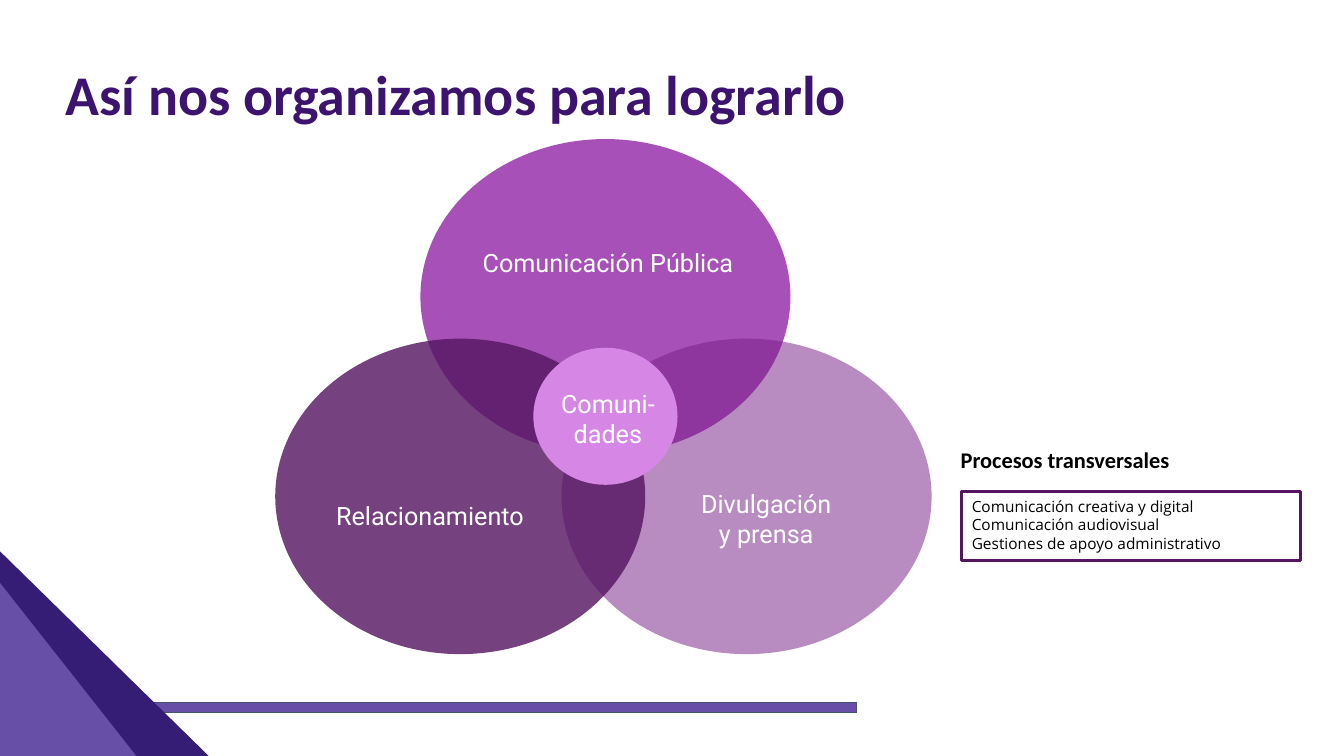
from lxml import etree
from pptx import Presentation
from pptx.dml.color import RGBColor
from pptx.enum import shapes, text
from pptx.oxml import ns
from pptx.util import Inches, Pt

INDIGO = RGBColor(0x35, 0x1C, 0x75)
VIOLET = RGBColor(0x67, 0x4E, 0xA7)
SLATE = RGBColor(0x44, 0x54, 0x6A)
ORCHID = RGBColor(0x92, 0x25, 0xA5)
PURPLE = RGBColor(0x76, 0x1E, 0x86)
PLUM = RGBColor(0x55, 0x15, 0x61)
PINK = RGBColor(0xD6, 0x86, 0xE4)
TITLE = RGBColor(0x3C, 0x13, 0x6E)
WHITE = RGBColor(0xFF, 0xFF, 0xFF)
BLACK = RGBColor(0, 0, 0)

SHAPE = shapes.MSO_SHAPE
ALIGN = text.PP_ALIGN
ANCHOR = text.MSO_ANCHOR

BAND = (0, 6.97, 8.5, 0.1)
CORNERS = [((-0.01, 5.46, 2.09, 2.05), INDIGO), ((-0.01, 5.77, 1.37, 1.74), VIOLET)]
CIRCLE_SIZE = (3.67, 3.13)
CIRCLES = [
    ((4.17, 1.38), ORCHID, 80, ["Comunicación Pública"], (4.59, 2.09, 2.88, 1.02)),
    ((5.57, 3.36), PURPLE, 51, ["Divulgación", "y prensa"], (6.33, 4.63, 2.54, 1.02)),
    ((2.73, 3.36), PLUM, 81, ["Relacionamiento"], (2.48, 4.6, 3.57, 1.02)),
]
PROCESSES = [
    "Comunicación creativa y digital",
    "Comunicación audiovisual",
    "Gestiones de apoyo administrativo",
]


def inches(values):
    return [Inches(value) for value in values]


def add_figure(page, kind, place, fill=None, alpha=100, line=None, width=0.75):
    figure = page.shapes.add_shape(kind, *inches(place))
    figure.shadow.inherit = False
    if fill is None:
        figure.fill.background()
    else:
        figure.fill.solid()
        figure.fill.fore_color.rgb = fill
    if alpha < 100:
        color = figure.fill._xPr.find(".//" + ns.qn("a:srgbClr"))
        etree.SubElement(color, ns.qn("a:alpha"), val=str(alpha * 1000))
    if line is None:
        figure.line.fill.background()
    else:
        figure.line.color.rgb = line
        figure.line.width = Pt(width)
    return figure


def write(box, lines, size, font, color, bold=False, align=ALIGN.LEFT,
          anchor=ANCHOR.TOP, margins=(0.1, 0.05), spacing=None):
    frame = box.text_frame
    frame.word_wrap = True
    frame.auto_size = text.MSO_AUTO_SIZE.NONE
    frame.vertical_anchor = anchor
    frame.margin_left = frame.margin_right = Inches(margins[0])
    frame.margin_top = frame.margin_bottom = Inches(margins[1])
    for index, line in enumerate(lines):
        para = frame.add_paragraph() if index else frame.paragraphs[0]
        para.alignment = align
        para.line_spacing = spacing
        span = para.add_run()
        span.text = line
        span.font.size = Pt(size)
        span.font.name = font
        span.font.bold = bold
        span.font.color.rgb = color


def add_label(page, place, lines, margin):
    box = page.shapes.add_textbox(*inches(place))
    write(box, lines, 18, "Roboto", WHITE, align=ALIGN.CENTER,
          anchor=ANCHOR.MIDDLE, margins=(margin, margin))


def add_decoration(page):
    add_figure(page, SHAPE.RECTANGLE, BAND, VIOLET, line=SLATE)
    for place, color in CORNERS:
        add_figure(page, SHAPE.RIGHT_TRIANGLE, place, color)


def add_title(page):
    title = page.shapes.title
    title.left, title.top, title.width, title.height = inches((0.55, 0.55, 11.5, 0.83))
    write(title, ["Así nos organizamos para lograrlo"], 40, "Calibri", TITLE,
          bold=True, anchor=ANCHOR.MIDDLE, spacing=0.9)


def add_venn(page):
    for corner, color, alpha, lines, place in CIRCLES:
        add_figure(page, SHAPE.OVAL, corner + CIRCLE_SIZE, color, alpha)
        add_label(page, place, lines, 0.13)
    add_figure(page, SHAPE.OVAL, (5.29, 3.45, 1.43, 1.36), PINK)
    add_label(page, (5.16, 3.58, 1.74, 1.14), ["Comuni-", "dades"], 0.1)


def add_processes(page):
    frame = add_figure(page, SHAPE.RECTANGLE, (9.54, 4.88, 3.36, 0.68), line=PLUM, width=2.25)
    write(frame, PROCESSES, 11, "Open Sans", BLACK)
    heading = page.shapes.add_textbox(*inches((9.43, 4.33, 2.39, 0.28)))
    write(heading, ["Procesos transversales"], 16, "Calibri", BLACK,
          bold=True, margins=(0.1, 0.1))


def main():
    deck = Presentation()
    deck.slide_width, deck.slide_height = inches((13.33, 7.5))
    page = deck.slides.add_slide(deck.slide_layouts.get_by_name("Title Only"))
    add_decoration(page)
    add_title(page)
    add_venn(page)
    add_processes(page)
    deck.save("out.pptx")


if __name__ == "__main__":
    main()
